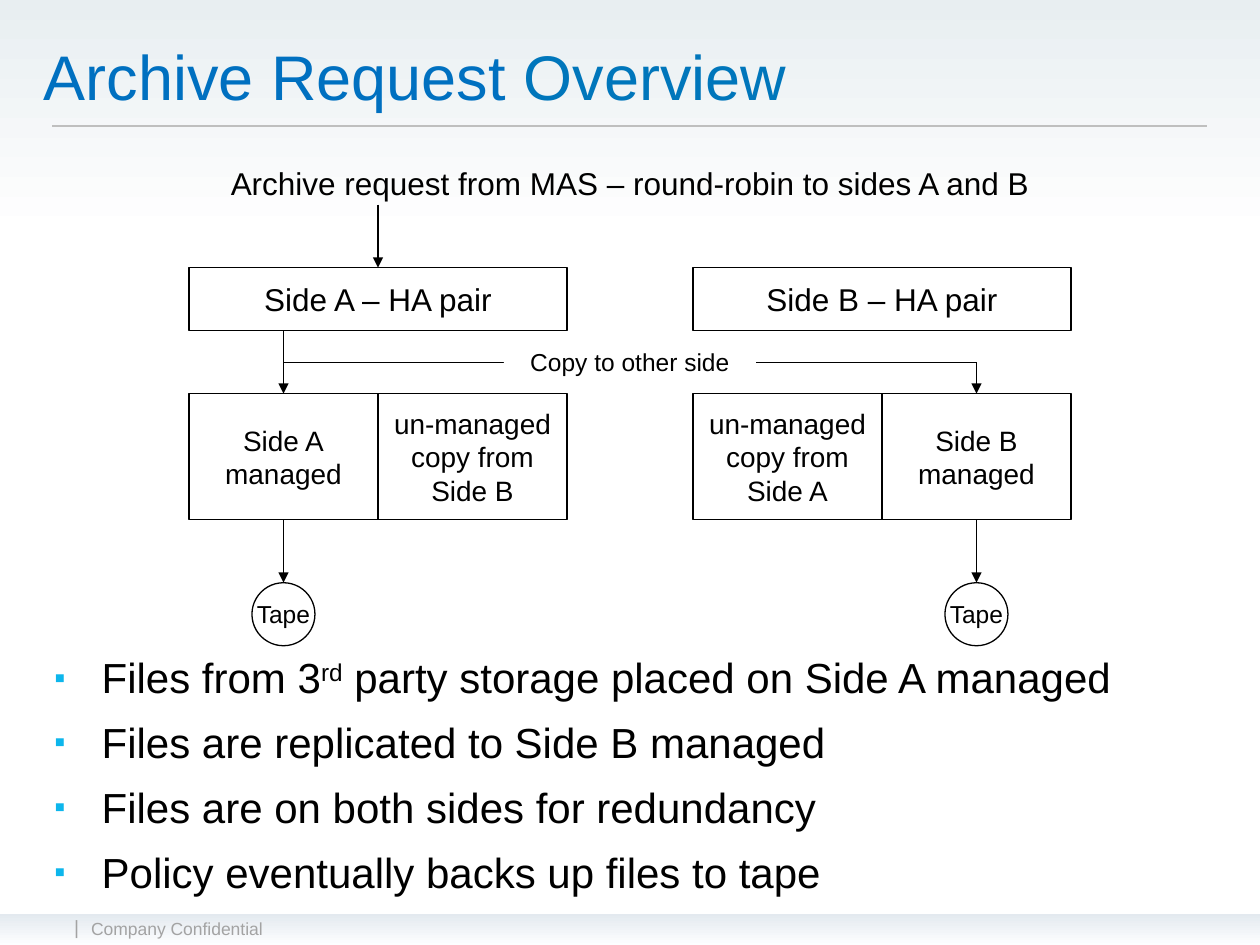
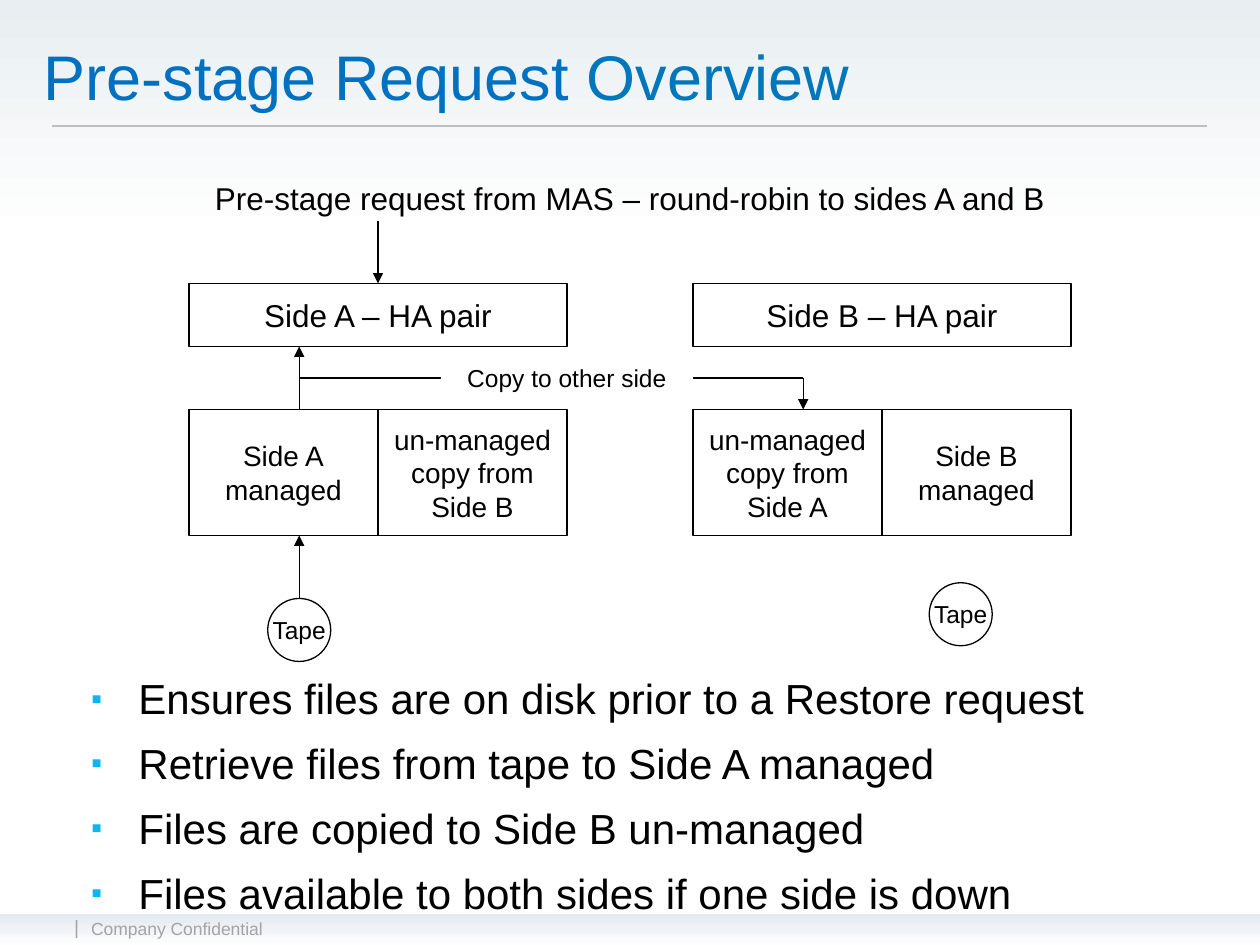
from dataclasses import dataclass

from lxml.etree import SubElement
from pptx import Presentation
from pptx.dml.color import RGBColor
from pptx.enum.shapes import MSO_CONNECTOR as Connector, MSO_SHAPE as Shape
from pptx.enum.text import MSO_ANCHOR as Anchor, PP_ALIGN as Align
from pptx.oxml.ns import qn
from pptx.util import Emu, Pt

PX = 9525  # 96 px to the inch
WIDTH, HEIGHT = 960, 720
TOP, BOTTOM = 0, 2  # connection sites


@dataclass(frozen=True)
class Theme:
    font: str = "Arial"
    ink: str = "000000"
    paper: str = "FFFFFF"
    title: str = "0070C0"
    title_end: str = "0076BB"
    bullet: str = "0DB6EC"
    muted: str = "A3A3A3"
    rule: str = "BFBFBF"
    backdrop: tuple = (("E8EEF1", 0), ("FFFFFF", 0.25))
    footer_band: tuple = (("E3E9EF", 0), ("FDFEFF", 1))
    title_size: int = 36
    body_size: int = 24
    pair_size: int = 18
    store_size: int = 16
    label_size: int = 14
    mark_size: int = 11
    footer_size: int = 10
    line_width: float = 0.75
    bullet_gap: float = 8.3
    bullet_indent: int = 36


def rgb(value):
    return RGBColor.from_string(value)


def px(*values):
    return [Emu(value * PX) for value in values]


class Painter:
    def __init__(self, deck, theme):
        self.deck, self.theme, self.page = deck, theme, None

    def new_page(self):
        self.page = self.deck.slides.add_slide(self.deck.slide_layouts[6])

    def style(self, span, size, color=None):
        span.font.name = self.theme.font
        span.font.size = Pt(size)
        span.font.color.rgb = rgb(color or self.theme.ink)

    def set_text(self, box, text, size, color=None, align=Align.CENTER):
        box.text_frame.text = text
        for para in box.text_frame.paragraphs:
            para.alignment = align
            for span in para.runs:
                self.style(span, size, color)

    def band(self, area, stops):
        band = self.page.shapes.add_shape(Shape.RECTANGLE, *px(*area))
        band.shadow.inherit = False
        band.line.fill.background()
        band.fill.gradient()
        band.fill.gradient_angle = 270
        for stop, (color, position) in zip(band.fill.gradient_stops, stops):
            stop.color.rgb = rgb(color)
            stop.position = position

    def text(self, area, text, size, color=None, align=Align.LEFT, fill=None):
        box = self.page.shapes.add_textbox(*px(*area))
        box.text_frame.word_wrap = True
        self.set_text(box, text, size, color, align)
        if fill:
            box.fill.solid()
            box.fill.fore_color.rgb = rgb(fill)
        return box

    def node(self, area, text, size, kind=Shape.RECTANGLE):
        node = self.page.shapes.add_shape(kind, *px(*area))
        node.shadow.inherit = False
        node.fill.background()
        node.line.color.rgb = rgb(self.theme.ink)
        node.line.width = Pt(self.theme.line_width)
        node.text_frame.word_wrap = kind == Shape.RECTANGLE
        node.text_frame.vertical_anchor = Anchor.MIDDLE
        self.set_text(node, text, size)
        return node

    def line(self, start, end, color=None):
        line = self.page.shapes.add_connector(Connector.STRAIGHT, *px(*start, *end))
        line.line.color.rgb = rgb(color or self.theme.ink)
        line.line.width = Pt(self.theme.line_width)
        SubElement(line._element.spPr, qn("a:effectLst"))
        return line

    def arrow(self, start, end, begin_at=None, end_at=None):
        """Draw an arrow; begin_at and end_at are (shape, site) pairs."""
        arrow = self.line(start, end)
        if begin_at:
            arrow.begin_connect(*begin_at)
        if end_at:
            arrow.end_connect(*end_at)
        SubElement(arrow._element.spPr.find(qn("a:ln")), qn("a:tailEnd"), type="triangle")

    def title(self, lead, last_word):
        box = self.text((24, 24, 816, 67), lead, self.theme.title_size, self.theme.title)
        box.text_frame.vertical_anchor = Anchor.MIDDLE
        span = box.text_frame.paragraphs[0].add_run()
        span.text = last_word
        self.style(span, self.theme.title_size, self.theme.title_end)

    def bullets(self, area, lines):
        """Text between ^ marks is raised."""
        frame = self.page.shapes.add_textbox(*px(*area)).text_frame
        frame.word_wrap = True
        for index, line in enumerate(lines):
            para = frame.add_paragraph() if index else frame.paragraphs[0]
            self.add_bullet(para)
            if index:
                para.space_before = Pt(self.theme.bullet_gap)
            for part, words in enumerate(line.split("^")):
                span = para.add_run()
                span.text = words
                self.style(span, self.theme.body_size)
                if part % 2:
                    span._r.get_or_add_rPr().set("baseline", "30000")

    def add_bullet(self, para):
        props = para._p.get_or_add_pPr()
        indent = self.theme.bullet_indent * PX
        props.set("marL", str(indent))
        props.set("indent", str(-indent))
        color = SubElement(props, qn("a:buClr"))
        SubElement(color, qn("a:srgbClr"), val=self.theme.bullet)
        SubElement(props, qn("a:buSzPct"), val="75000")
        SubElement(props, qn("a:buFont"), typeface=self.theme.font)
        SubElement(props, qn("a:buChar"), char="▪")

    def tape(self, center, top):
        return self.node((center - 24, top, 48, 48), "Tape",
                         self.theme.label_size, Shape.OVAL)


def start_page(painter, lead):
    """Backdrop, footer, rule and title."""
    theme = painter.theme
    painter.new_page()
    painter.band((0, 0, WIDTH, HEIGHT), theme.backdrop)
    painter.band((0, 696, WIDTH, 24), theme.footer_band)
    painter.text((60, 695, 480, 24), "Company Confidential", theme.footer_size, theme.muted)
    painter.text((48, 693, 18, 26), "|", theme.mark_size, theme.muted)
    painter.line((40, 96), (920, 96), theme.rule)
    painter.title(lead, "Overview")


def draw_sides(painter, request, top):
    """Request, both HA pairs and their storage; returns the managed boxes."""
    theme = painter.theme
    pairs, stores = top + 48, top + 144
    pair_a, _ = [painter.node((left, pairs, 288, 48), f"Side {side} – HA pair", theme.pair_size)
                 for side, left in (("A", 144), ("B", 528))]
    labels = ("Side A\vmanaged", "un-managed copy from Side B",
              "un-managed copy from Side A", "Side B\vmanaged")
    boxes = [painter.node((left, stores, 144, 96), label, theme.store_size)
             for left, label in zip((144, 288, 528, 672), labels)]
    painter.text((96, top - 36, 768, 38), request, theme.pair_size, align=Align.CENTER)
    painter.arrow((288, top), (288, pairs), end_at=(pair_a, TOP))
    return boxes[0], boxes[3]


def draw_copy(painter, top, left, right, label_left, end_at=None):
    """Rail from side A to side B with its label."""
    rail = top + 120
    painter.line((left, rail), (right, rail))
    painter.arrow((right, rail), (right, top + 144), end_at=end_at)
    painter.text((label_left, top + 104, 192, 32), "Copy to other side",
                 painter.theme.label_size, align=Align.CENTER, fill=painter.theme.paper)


def archive_page(painter):
    start_page(painter, "Archive Request ")
    painter.bullets((32, 492, 896, 192), (
        "Files from 3^rd^ party storage placed on Side A managed",
        "Files are replicated to Side B managed",
        "Files are on both sides for redundancy",
        "Policy eventually backs up files to tape"))
    top, left, right = 156, 216, 744
    managed = draw_sides(
        painter, "Archive request from MAS – round-robin to sides A and B", top)
    painter.arrow((left, top + 96), (left, top + 144), end_at=(managed[0], TOP))
    draw_copy(painter, top, left, right, 384, end_at=(managed[1], TOP))
    for center, box in zip((left, right), managed):
        tape = painter.tape(center, top + 288)
        painter.arrow((center, top + 240), (center, top + 288), (box, BOTTOM), (tape, TOP))


def prestage_page(painter):
    start_page(painter, "Pre-stage Request ")
    painter.bullets((60, 508, 852, 192), (
        "Ensures files are on disk prior to a Restore request",
        "Retrieve files from tape to Side A managed",
        "Files are copied to Side B un-managed",
        "Files available to both sides if one side is down"))
    top, left = 168, 228
    draw_sides(painter, "Pre-stage request from MAS – round-robin to sides A and B", top)
    draw_copy(painter, top, left, 612, 336)
    tape = painter.tape(left, top + 288)
    painter.tape(732, top + 276)
    painter.arrow((left, top + 288), (left, top + 240), begin_at=(tape, TOP))
    painter.arrow((left, top + 144), (left, top + 96))


def main():
    deck = Presentation()
    deck.slide_width, deck.slide_height = px(WIDTH, HEIGHT)
    painter = Painter(deck, Theme())
    archive_page(painter)
    prestage_page(painter)
    deck.save("out.pptx")


if __name__ == "__main__":
    main()
